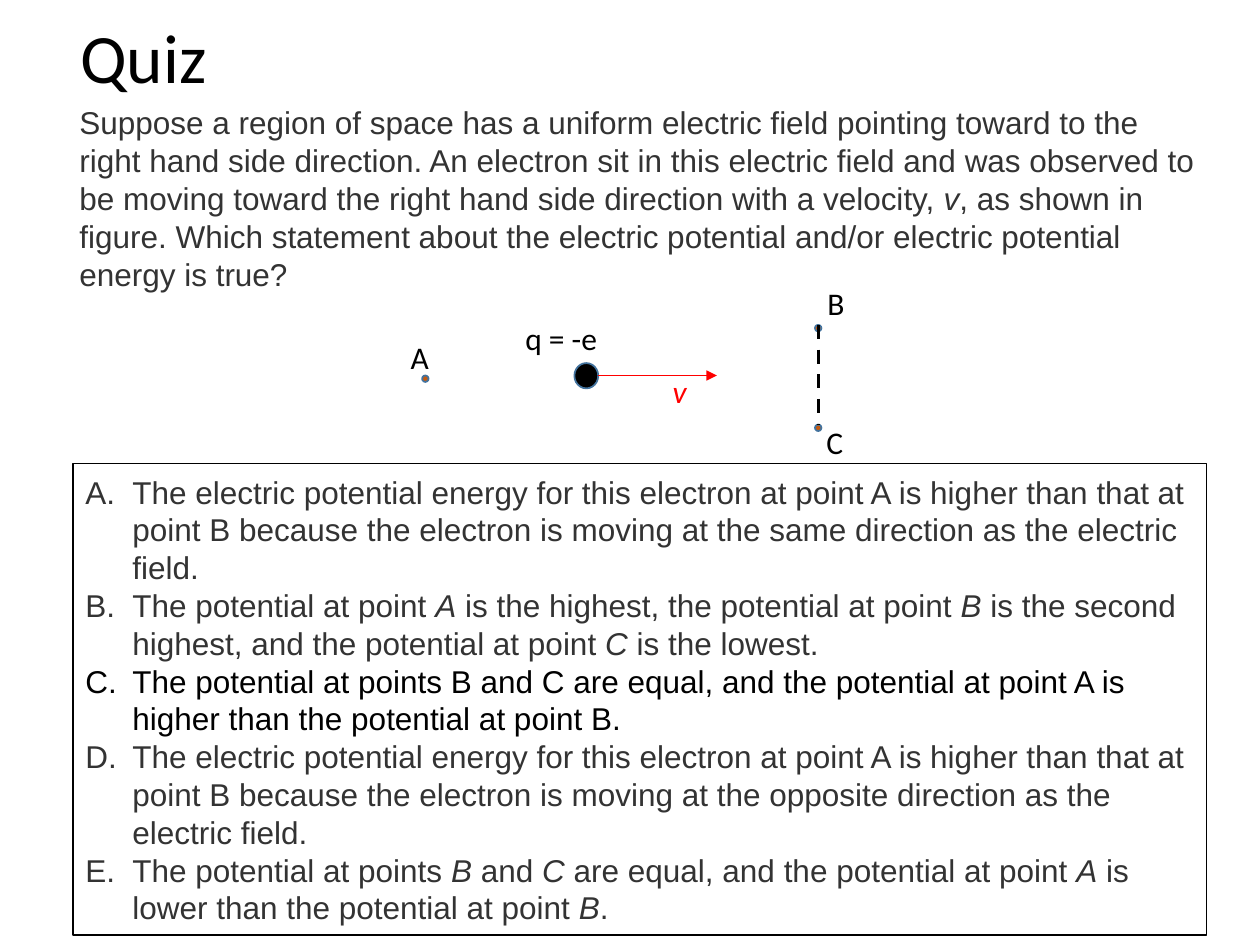
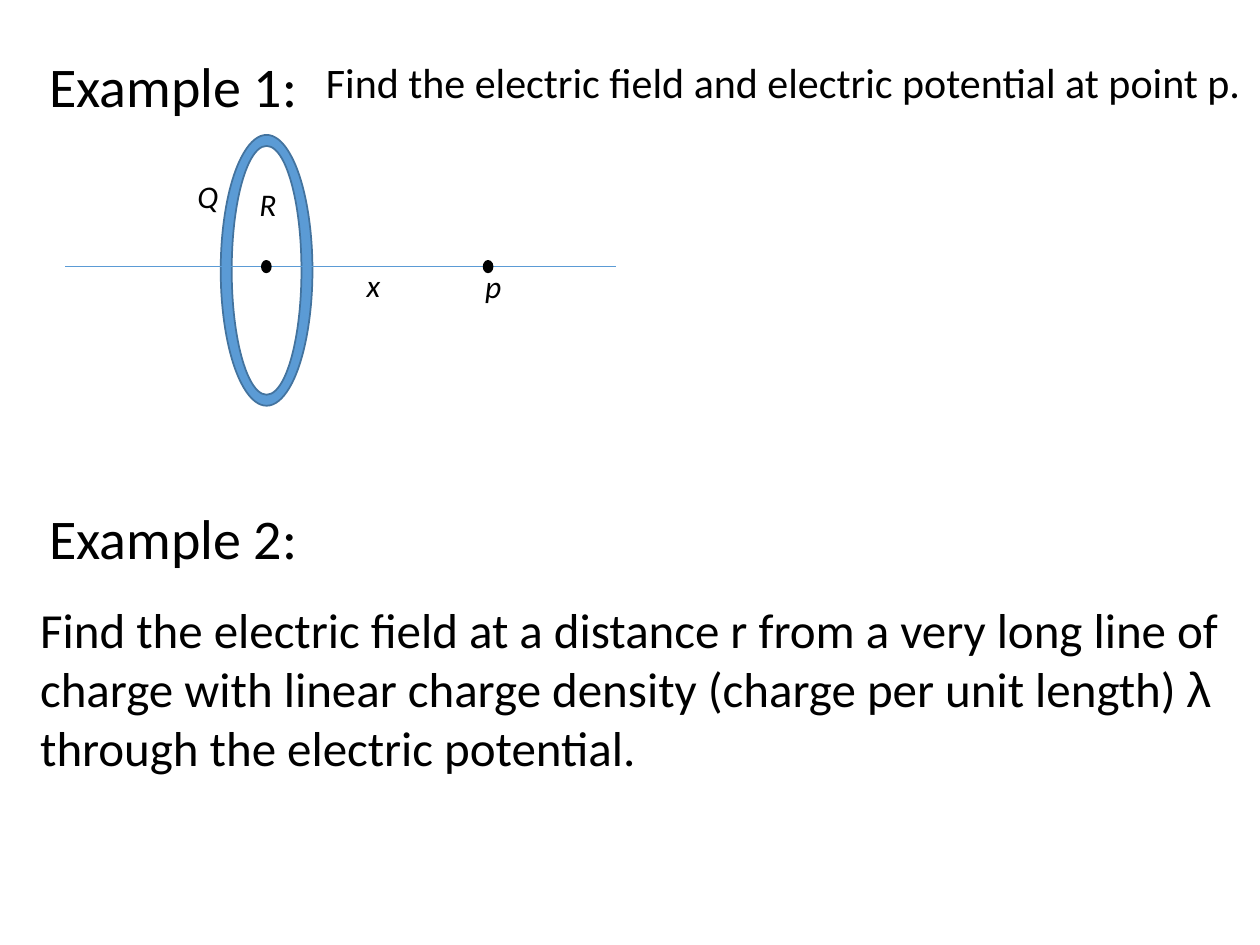
from lxml.etree import SubElement
from pptx import Presentation
from pptx.dml.color import RGBColor
from pptx.enum.dml import MSO_LINE
from pptx.enum.shapes import MSO_CONNECTOR, MSO_SHAPE
from pptx.enum.text import MSO_ANCHOR, PP_ALIGN
from pptx.oxml.ns import qn
from pptx.util import Cm, Pt

rgb = RGBColor.from_string
BLACK, GREY, RED = "000000", "333333", "FF0000"
BLUE, DARK_BLUE, ORANGE = "5B9BD5", "43739E", "C55A11"


def add_text(s, text, at, size=18, font="Calibri", color=BLACK, italic=False,
             alt_font=None, wrap=False, anchor=MSO_ANCHOR.TOP, sp=None):
    """Write lines into sp or a new text box; *marked* parts are italic or in alt_font."""
    sp = sp or s.shapes.add_textbox(*map(Cm, at))
    tf = sp.text_frame
    tf.word_wrap = wrap
    tf.vertical_anchor = anchor
    for i, line in enumerate(text.split("\n")):
        p = tf.add_paragraph() if i else tf.paragraphs[0]
        p.alignment = PP_ALIGN.LEFT
        for j, part in enumerate(line.split("*")):
            marked = j % 2 == 1
            r = p.add_run()
            r.text = part
            r.font.size = Pt(size)
            r.font.name = alt_font if marked and alt_font else font
            r.font.italic = italic or (marked and not alt_font)
            r.font.color.rgb = rgb(color)
    return tf


def draw(s, kind, at, line, width=1, fill=None, dash=None, arrow=False):
    """Add a preset shape (left, top, width, height) or a line (x1, y1, x2, y2)."""
    if kind is MSO_CONNECTOR.STRAIGHT:
        sp = s.shapes.add_connector(kind, *map(Cm, at))
    else:
        sp = s.shapes.add_shape(kind, *map(Cm, at))
        if fill:
            sp.fill.solid()
            sp.fill.fore_color.rgb = rgb(fill)
        else:
            sp.fill.background()
    sp.line.color.rgb = rgb(line)
    sp.line.width = Pt(width)
    if dash:
        sp.line.dash_style = dash
    spPr = sp.element.spPr
    if arrow:
        SubElement(spPr.find(qn("a:ln")), qn("a:tailEnd"), type="triangle")
    SubElement(spPr, qn("a:effectLst"))
    return sp


prs = Presentation()
prs.slide_width, prs.slide_height = Cm(25.4), Cm(19.05)
blank = prs.slide_layouts[6]

# Slide 1: quiz
s = prs.slides.add_slide(blank)
tf = add_text(s, "Quiz", (1.37, 0.43, 21.89, 1.6), size=39.6, wrap=True,
              anchor=MSO_ANCHOR.MIDDLE)
tf.paragraphs[0].line_spacing = 0.9
add_text(s, "Suppose a region of space has a uniform electric field pointing toward to the "
         "right hand side direction. An electron sit in this electric field and was observed "
         "to be moving toward the right hand side direction with a velocity, *v*, as shown in "
         "figure. Which statement about the electric potential and/or electric potential "
         "energy is true?", (1.35, 1.96, 22.99, 4.11), font="Arial", color=GREY, wrap=True)

answers = [
    "The electric potential energy for this electron at point A is higher than that at "
    "point B because the electron is moving at the same direction as the electric field.",
    "The potential at point *A* is the highest, the potential at point *B* is the second "
    "highest, and the potential at point *C* is the lowest.",
    "The potential at points B and C are equal, and the potential at point A is higher "
    "than the potential at point B.",
    "The electric potential energy for this electron at point A is higher than that at "
    "point B because the electron is moving at the opposite direction as the electric field.",
    "The potential at points *B* and *C* are equal, and the potential at point *A* is lower "
    "than the potential at point *B*.",
]
answer_box = draw(s, MSO_SHAPE.RECTANGLE, (1.47, 9.35, 22.86, 9.5), BLACK, width=0.75)
tf = add_text(s, "\n".join(answers), None, font="Arial", color=GREY, wrap=True,
              anchor=MSO_ANCHOR.MIDDLE, sp=answer_box)
for p in tf.paragraphs:
    pPr = p._p.get_or_add_pPr()
    pPr.set("marL", str(Cm(0.95)))
    pPr.set("indent", str(-Cm(0.95)))
    SubElement(pPr, qn("a:buFont"), typeface="+mj-lt")
    SubElement(pPr, qn("a:buAutoNum"), type="alphaUcPeriod")
for r in tf.paragraphs[2].runs:
    r.font.color.rgb = rgb(BLACK)

draw(s, MSO_SHAPE.OVAL, (11.58, 7.32, 0.48, 0.51), DARK_BLUE, fill=BLACK)
draw(s, MSO_CONNECTOR.STRAIGHT, (12.06, 7.57, 14.45, 7.57), RED, width=0.5, arrow=True)
add_text(s, "q = -e", (10.34, 6.3, 1.98, 1.02))
add_text(s, "v", (13.31, 7.37, 0.81, 1.02), color=RED, italic=True)
for x, y in [(8.51, 7.57), (16.43, 6.55), (16.43, 8.56)]:
    draw(s, MSO_SHAPE.OVAL, (x, y, 0.13, 0.13), DARK_BLUE, fill=ORANGE)
draw(s, MSO_CONNECTOR.STRAIGHT, (16.5, 6.55, 16.5, 8.56), BLACK, width=2, dash=MSO_LINE.DASH)
for name, x, y in [("A", 8.03, 6.68), ("B", 16.43, 5.61), ("C", 16.41, 8.41)]:
    add_text(s, name, (x, y, 0.89, 1.02))

# Slide 2: examples
s = prs.slides.add_slide(blank)
for heading, y in [("Example 1:", 0.91), ("Example 2:", 10.03)]:
    add_text(s, heading, (0.74, y, 5.59, 1.63), size=32)
add_text(s, "Find the electric field and electric potential at point p.",
         (6.32, 1.02, 19.13, 1.27), size=24)
add_text(s, "Find the electric field at a distance r from a very long line of charge with "
         "linear charge density (charge per unit length) *λ* through the electric potential.",
         (0.56, 11.96, 24.59, 3.84), size=28, alt_font="Arial", wrap=True)

ring = draw(s, MSO_SHAPE.DONUT, (4.45, 2.72, 1.85, 5.46), DARK_BLUE, fill=BLUE)
ring.adjustments[0] = 0.12
draw(s, MSO_CONNECTOR.STRAIGHT, (1.32, 5.38, 12.42, 5.38), BLUE, width=0.5)
for x in (5.28, 9.75):
    draw(s, MSO_SHAPE.OVAL, (x, 5.26, 0.18, 0.23), BLACK, fill=BLACK)
for name, x, y, w in [("x", 7.14, 5.23, 0.79), ("R", 4.98, 3.61, 0.86),
                      ("Q", 3.73, 3.45, 0.94), ("p", 9.53, 5.26, 0.84)]:
    add_text(s, name, (x, y, w, 1.02), italic=True)

prs.save("out.pptx")
